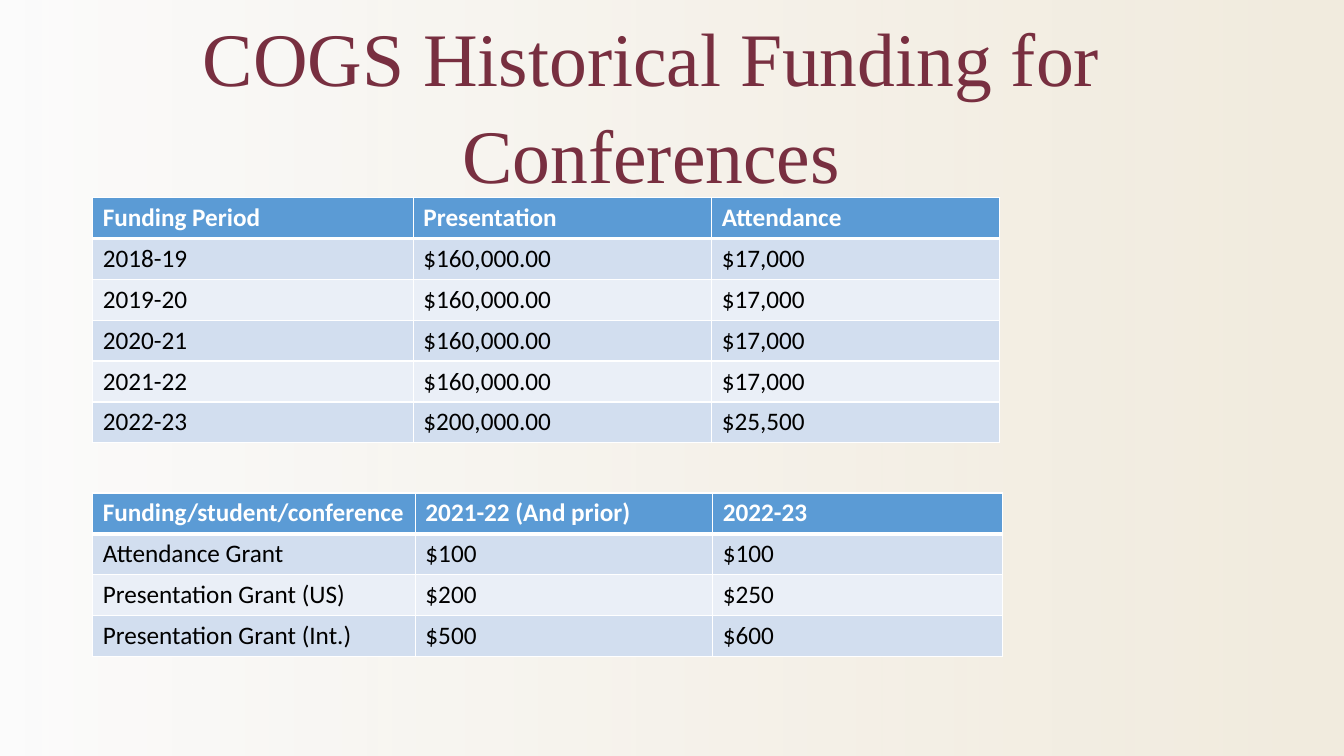
from lxml.etree import SubElement as Sub
from pptx import Presentation
from pptx.dml.color import RGBColor as RGB
from pptx.enum.shapes import MSO_SHAPE as Kind
from pptx.enum.text import MSO_ANCHOR as Anchor, PP_ALIGN as Align
from pptx.oxml.ns import qn
from pptx.util import Inches, Pt

WIDE, HIGH = 13.33, 7.5
LEFT, ROW = 0.92, 0.405

WHITE = RGB(0xFF, 0xFF, 0xFF)
BLACK = RGB(0x00, 0x00, 0x00)
GARNET = RGB(0x78, 0x2F, 0x40)
GOLD = RGB(0xCE, 0xB8, 0x88)
PALE = RGB(0xF5, 0xF5, 0xF5)
BLUE = RGB(0x5B, 0x9B, 0xD5)
BANDS = RGB(0xEA, 0xEF, 0xF7), RGB(0xD2, 0xDE, 0xEF)

TOTALS = [
    ("Funding Period", "Presentation", "Attendance"),
    ("2018-19", "$160,000.00", "$17,000"),
    ("2019-20", "$160,000.00", "$17,000"),
    ("2020-21", "$160,000.00", "$17,000"),
    ("2021-22", "$160,000.00", "$17,000"),
    ("2022-23", "$200,000.00", "$25,500"),
]
GRANTS = [
    ("Funding/student/conference", "2021-22 (And prior)", "2022-23"),
    ("Attendance Grant", "$100", "$100"),
    ("Presentation Grant (US)", "$200", "$250"),
    ("Presentation Grant (Int.)", "$500", "$600"),
]


def write(frame, text, size=18, font="Calibri", color=BLACK, bold=False,
          align=Align.LEFT, space=None):
    para = frame.paragraphs[0]
    para.alignment = align
    para.line_spacing = space
    run = para.add_run()
    run.text = text
    run.font.size = Pt(size)
    run.font.name = font
    run.font.bold = bold
    run.font.color.rgb = color


def edge(cell, side, width):
    """Draw one white border of a cell."""
    line = Sub(cell._tc.get_or_add_tcPr(), qn("a:ln" + side), w=str(Pt(width)))
    fill = Sub(line, qn("a:solidFill"))
    Sub(fill, qn("a:srgbClr"), val=str(WHITE))


def add_wash(slide):
    """Cover the slide with a see-through gradient, gold at the right."""
    wash = slide.shapes.add_shape(Kind.RECTANGLE, 0, 0, Inches(WIDE), Inches(HIGH))
    wash.rotation = 180
    wash.shadow.inherit = False
    wash.line.fill.background()
    wash.fill.gradient()
    wash.fill.gradient_angle = 0
    for stop, color in zip(wash.fill.gradient_stops, (GOLD, PALE)):
        stop.color.rgb = color
    tints = wash._element.spPr.iter(qn("a:srgbClr"))
    for tint, share in zip(tints, (28, 34)):
        Sub(tint, qn("a:alpha"), val=str(share * 1000))


def add_grid(slide, data, top, widths):
    """Add a table with a blue head row and banded body rows."""
    frame = slide.shapes.add_table(
        len(data), len(widths), Inches(LEFT), Inches(top),
        Inches(sum(widths)), Inches(ROW * len(data)))
    table = frame.table
    for col, width in zip(table.columns, widths):
        col.width = Inches(width)
    for r, texts in enumerate(data):
        head = r == 0
        table.rows[r].height = Inches(ROW)
        for c, text in enumerate(texts):
            cell = table.cell(r, c)
            for side in "LRTB":
                thick = (r, side) in ((0, "B"), (1, "T"))
                edge(cell, side, 3 if thick else 1)
            cell.fill.solid()
            cell.fill.fore_color.rgb = BLUE if head else BANDS[r % 2]
            write(cell.text_frame, text, bold=head, color=WHITE if head else BLACK)


def add_title(slide, text):
    box = slide.shapes.add_textbox(Inches(0.48), Inches(0.05), Inches(11.96), Inches(1.92))
    frame = box.text_frame
    frame.word_wrap = True
    frame.vertical_anchor = Anchor.MIDDLE
    write(frame, text, size=54, font="Times New Roman", color=GARNET,
          align=Align.CENTER, space=1.07)


def main():
    deck = Presentation()
    deck.slide_width, deck.slide_height = Inches(WIDE), Inches(HIGH)
    slide = deck.slides.add_slide(deck.slide_layouts[6])

    # Background
    add_wash(slide)

    # Yearly totals, then the amounts per student
    add_grid(slide, TOTALS, 1.96, (3.18, 2.96, 2.85))
    add_grid(slide, GRANTS, 4.89, (3.2, 2.95, 2.87))

    # Heading
    add_title(slide, "COGS Historical Funding for Conferences")
    deck.save("out.pptx")


if __name__ == "__main__":
    main()
